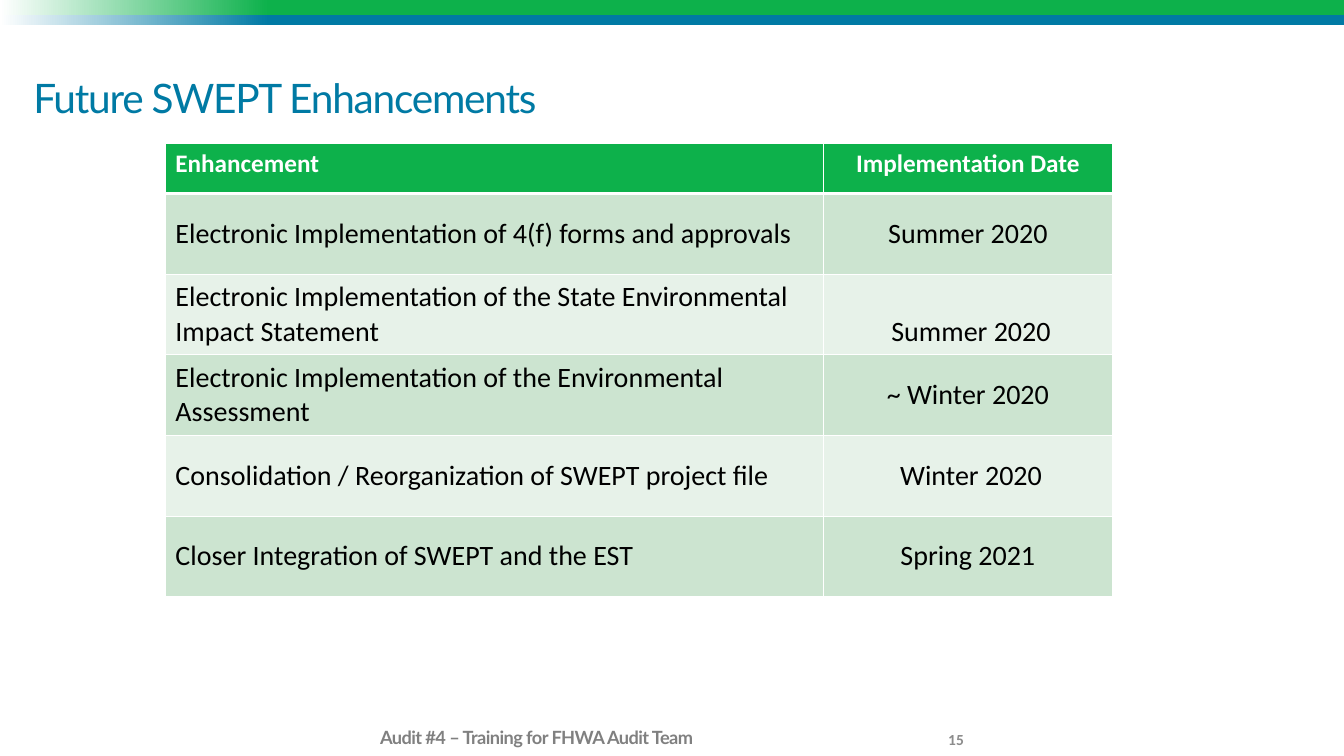
import pptx
import pptx.dml.color
import pptx.enum.shapes
import pptx.enum.text
import pptx.oxml
import pptx.oxml.ns
import pptx.util

Inches = pptx.util.Inches
Pt = pptx.util.Pt
ALIGN = pptx.enum.text.PP_ALIGN
ANCHOR = pptx.enum.text.MSO_ANCHOR

COLORS = {
    "white": "FFFFFF", "black": "000000", "green": "0DB14B", "blue": "007AA4",
    "footer": "808080", "number": "8C8C8C", "dark_band": "CCE4D0", "light_band": "E7F2E9",
}
ENHANCEMENTS = [
    ("Electronic Implementation of 4(f) forms and approvals", "Summer 2020"),
    ("Electronic Implementation of the State Environmental Impact Statement", " Summer 2020"),
    ("Electronic Implementation of the Environmental Assessment", "~ Winter 2020"),
    ("Consolidation / Reorganization of SWEPT project file", " Winter 2020"),
    ("Closer Integration of SWEPT and the EST", "Spring 2021"),
]
LOW_DATE_ROW = 2


def color(name):
    return pptx.dml.color.RGBColor.from_string(COLORS[name])


def set_all(target, values):
    for name, value in values.items():
        setattr(target, name, value)


class SlideBuilder:
    title_font = {"name": "Lato", "size": Pt(29), "bold": False}
    footer_font = {"name": "Lato", "size": Pt(13), "bold": True}
    number_font = {"name": "Calibri", "size": Pt(11), "bold": True}
    header_font = {"name": "Calibri", "size": Pt(18), "bold": True}
    body_font = {"name": "Calibri", "size": Pt(20), "bold": False}
    no_margins = {"margin_left": 0, "margin_right": 0, "margin_top": 0, "margin_bottom": 0}

    def __init__(self, slide):
        self.slide = slide

    def add_text(self, frame, text, font, color_name, spacing=0, **paragraph_format):
        """Fill a text frame with one formatted run; spacing is in points."""
        paragraph = frame.paragraphs[0]
        set_all(paragraph, paragraph_format)
        run = paragraph.add_run()
        run.text = text
        set_all(run.font, font)
        run.font.color.rgb = color(color_name)
        if spacing:
            run._r.get_or_add_rPr().set("spc", str(round(spacing * 100)))

    def prepare_frame(self, shape):
        frame = shape.text_frame
        set_all(frame, self.no_margins | {
            "word_wrap": True,
            "auto_size": pptx.enum.text.MSO_AUTO_SIZE.NONE,
            "vertical_anchor": ANCHOR.BOTTOM,
        })
        return frame

    def title(self, text, left, top, width, height):
        shape = self.slide.shapes.title
        set_all(shape, {"left": Inches(left), "top": Inches(top),
                        "width": Inches(width), "height": Inches(height)})
        self.add_text(self.prepare_frame(shape), text, self.title_font, "blue",
                      spacing=-0.9, alignment=ALIGN.LEFT, line_spacing=0.8)

    def text_box(self, box, text, font, color_name, **options):
        shape = self.slide.shapes.add_textbox(*map(Inches, box))
        self.add_text(self.prepare_frame(shape), text, font, color_name, **options)

    def gradient_band(self, top, height, color_name):
        band = self.slide.shapes.add_shape(
            pptx.enum.shapes.MSO_SHAPE.RECTANGLE, 0, Inches(top), Inches(13.33), Inches(height))
        band.shadow.inherit = False
        band.line.fill.background()
        band.fill.gradient()
        band.fill.gradient_angle = 0
        stops = zip(band.fill.gradient_stops, ("white", color_name), (0, 0.2))
        for stop, stop_color, position in stops:
            stop.color.rgb = color(stop_color)
            stop.position = position

    def borders(self, cell, top=1, bottom=1):
        properties = cell._tc.get_or_add_tcPr()
        widths = {"lnL": 1, "lnR": 1, "lnT": top, "lnB": bottom}
        for index, (tag, width) in enumerate(widths.items()):
            properties.insert(index, pptx.oxml.parse_xml(
                f'<a:{tag} {pptx.oxml.ns.nsdecls("a")} w="{Pt(width)}"><a:solidFill>'
                f'<a:srgbClr val="{COLORS["white"]}"/></a:solidFill></a:{tag}>'))

    def table(self, left, top, column_widths, row_heights, rows):
        """Draw a header row followed by banded rows."""
        table = self.slide.shapes.add_table(
            len(rows), len(column_widths), Inches(left), Inches(top),
            Inches(sum(column_widths)), Inches(sum(row_heights))).table
        for column, width in zip(table.columns, column_widths):
            column.width = Inches(width)
        for row_index, (row, height) in enumerate(zip(rows, row_heights)):
            table.rows[row_index].height = Inches(height)
            is_header = row_index == 0
            band = "dark_band" if row_index % 2 else "light_band"
            for column_index, text in enumerate(row):
                cell = table.cell(row_index, column_index)
                cell.fill.solid()
                cell.fill.fore_color.rgb = color("green" if is_header else band)
                self.borders(cell, top=3 if row_index == 1 else 1, bottom=3 if is_header else 1)
                if not is_header:
                    set_all(cell, self.no_margins | {"vertical_anchor": ANCHOR.MIDDLE})
                    if column_index == 0:
                        cell.margin_left = Inches(0.1)
                    elif row_index == LOW_DATE_ROW:
                        set_all(cell, {"vertical_anchor": ANCHOR.BOTTOM,
                                       "margin_bottom": Inches(0.06)})
                self.add_text(cell.text_frame, text,
                              self.header_font if is_header else self.body_font,
                              "white" if is_header else "black",
                              alignment=ALIGN.CENTER if column_index else ALIGN.LEFT)


def main():
    presentation = pptx.Presentation()
    presentation.slide_width = Inches(13.33)
    presentation.slide_height = Inches(7.5)
    builder = SlideBuilder(presentation.slides.add_slide(presentation.slide_layouts[5]))
    builder.gradient_band(0, 0.15, "green")
    builder.gradient_band(0.15, 0.1, "blue")
    builder.title("Future SWEPT Enhancements", 0.33, 0.3, 12, 0.9)
    builder.table(1.64, 1.42, [6.53, 2.86], [0.5] + [0.8] * len(ENHANCEMENTS),
                  [("Enhancement", "Implementation Date")] + ENHANCEMENTS)
    builder.text_box((3.77, 6.95, 5.34, 0.47), "Audit #4 – Training for FHWA Audit Team",
                     builder.footer_font, "footer", spacing=-0.4,
                     line_spacing=0.8, space_after=Pt(12))
    builder.text_box((8.78, 7.03, 0.78, 0.4), "15", builder.number_font, "number",
                     alignment=ALIGN.RIGHT)
    presentation.save("out.pptx")


if __name__ == "__main__":
    main()
